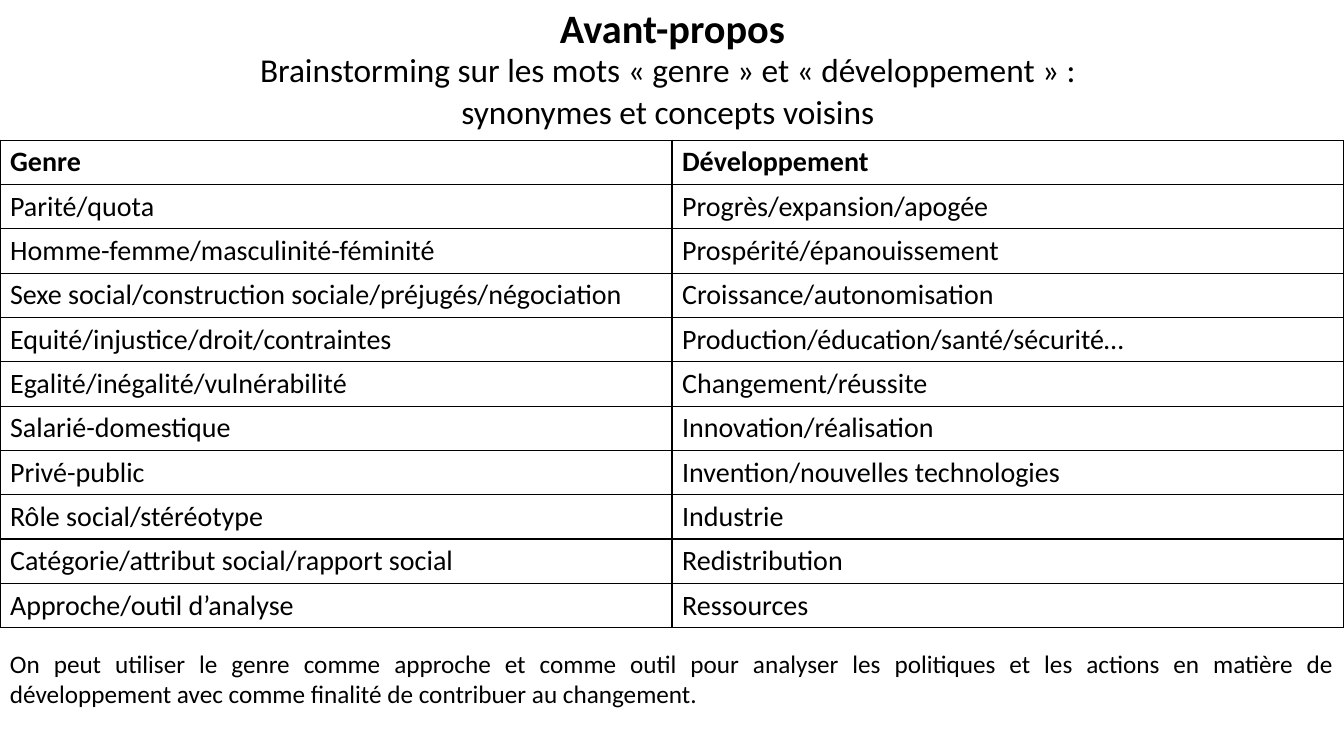
from dataclasses import dataclass

from lxml import etree
from pptx import Presentation
from pptx.dml.color import RGBColor
from pptx.enum.text import MSO_ANCHOR, PP_ALIGN
from pptx.oxml.ns import qn
from pptx.slide import Slide
from pptx.table import _Cell
from pptx.text.text import _Paragraph
from pptx.util import Inches, Pt

BLACK = RGBColor(0x00, 0x00, 0x00)
FONT_NAME = "Calibri"
LEFT, CENTER, JUSTIFY = PP_ALIGN.LEFT, PP_ALIGN.CENTER, PP_ALIGN.JUSTIFY
TOP, MIDDLE = MSO_ANCHOR.TOP, MSO_ANCHOR.MIDDLE

SLIDE_WIDTH, SLIDE_HEIGHT = 13.33, 7.5
TABLE_TOP, ROW_HEIGHT = 1.39, 0.44
BORDER_WIDTH = Pt(1)
BORDER_SIDES = ("a:lnL", "a:lnR", "a:lnT", "a:lnB")


@dataclass
class TextBlock:
    lines: list[str]
    left: float
    top: float
    width: float
    height: float
    size: float
    paragraph_format: dict
    bold: bool = False
    anchor: MSO_ANCHOR = TOP


@dataclass
class SynonymRow:
    genre: str
    developpement: str


TEXT_BLOCKS = [
    TextBlock(["Avant-propos"], 0.92, 0.06, 11.5, 0.49, 28.8,
              {"alignment": CENTER, "line_spacing": 0.9}, bold=True, anchor=MIDDLE),
    TextBlock(["Brainstorming sur les mots « genre » et « développement » : ",
               "synonymes et concepts voisins "], 0.18, 0.55, 12.96, 0.81, 23.8,
              {"alignment": CENTER, "line_spacing": 0.7, "space_before": Pt(10)}),
    TextBlock(["On peut utiliser le genre comme approche et comme outil pour analyser "
               "les politiques et les actions en matière de développement avec comme "
               "finalité de contribuer au changement."],
              0, 6.38, SLIDE_WIDTH, 0.71, 18, {"alignment": JUSTIFY}),
]

SYNONYM_ROWS = [
    SynonymRow("Genre", "Développement"),
    SynonymRow("Parité/quota", "Progrès/expansion/apogée"),
    SynonymRow("Homme-femme/masculinité-féminité", "Prospérité/épanouissement"),
    SynonymRow("Sexe social/construction sociale/préjugés/négociation",
               "Croissance/autonomisation"),
    SynonymRow("Equité/injustice/droit/contraintes",
               "Production/éducation/santé/sécurité…"),
    SynonymRow("Egalité/inégalité/vulnérabilité", "Changement/réussite"),
    SynonymRow("Salarié-domestique", "Innovation/réalisation"),
    SynonymRow("Privé-public", "Invention/nouvelles technologies"),
    SynonymRow("Rôle social/stéréotype", "Industrie"),
    SynonymRow("Catégorie/attribut social/rapport social", "Redistribution"),
    SynonymRow("Approche/outil d’analyse", "Ressources"),
]


def write_line(paragraph: _Paragraph, text: str, size: float, bold: bool,
               paragraph_format: dict) -> None:
    for attribute, value in paragraph_format.items():
        setattr(paragraph, attribute, value)
    run = paragraph.add_run()
    run.text = text
    font_format = {"name": FONT_NAME, "size": Pt(size), "bold": bold}
    for attribute, value in font_format.items():
        setattr(run.font, attribute, value)
    run.font.color.rgb = BLACK


def draw_text_block(slide: Slide, block: TextBlock) -> None:
    box = slide.shapes.add_textbox(Inches(block.left), Inches(block.top),
                                   Inches(block.width), Inches(block.height))
    frame = box.text_frame
    frame.word_wrap = True
    frame.vertical_anchor = block.anchor
    for index, line in enumerate(block.lines):
        paragraph = frame.add_paragraph() if index else frame.paragraphs[0]
        write_line(paragraph, line, block.size, block.bold, block.paragraph_format)


def draw_borders(cell: _Cell) -> None:
    properties = cell._tc.get_or_add_tcPr()
    for position, side in enumerate(BORDER_SIDES):
        border = etree.Element(qn(side), w=str(BORDER_WIDTH))
        fill = etree.SubElement(border, qn("a:solidFill"))
        etree.SubElement(fill, qn("a:srgbClr"), val=str(BLACK))
        properties.insert(position, border)


def draw_synonym_table(slide: Slide, rows: list[SynonymRow]) -> None:
    table = slide.shapes.add_table(len(rows), 2, Inches(0), Inches(TABLE_TOP),
                                   Inches(SLIDE_WIDTH),
                                   Inches(ROW_HEIGHT * len(rows))).table
    table.horz_banding = False
    for row_index, row in enumerate(rows):
        table.rows[row_index].height = Inches(ROW_HEIGHT)
        for column, term in enumerate((row.genre, row.developpement)):
            cell = table.cell(row_index, column)
            cell.fill.background()
            draw_borders(cell)
            write_line(cell.text_frame.paragraphs[0], term, 20, row_index == 0,
                       {"alignment": LEFT})


def main() -> None:
    presentation = Presentation()
    presentation.slide_width = Inches(SLIDE_WIDTH)
    presentation.slide_height = Inches(SLIDE_HEIGHT)
    slide = presentation.slides.add_slide(presentation.slide_layouts[6])

    # Title, subtitle and closing remark
    for block in TEXT_BLOCKS:
        draw_text_block(slide, block)

    # Synonyms of the two words
    draw_synonym_table(slide, SYNONYM_ROWS)

    presentation.save("out.pptx")


if __name__ == "__main__":
    main()
